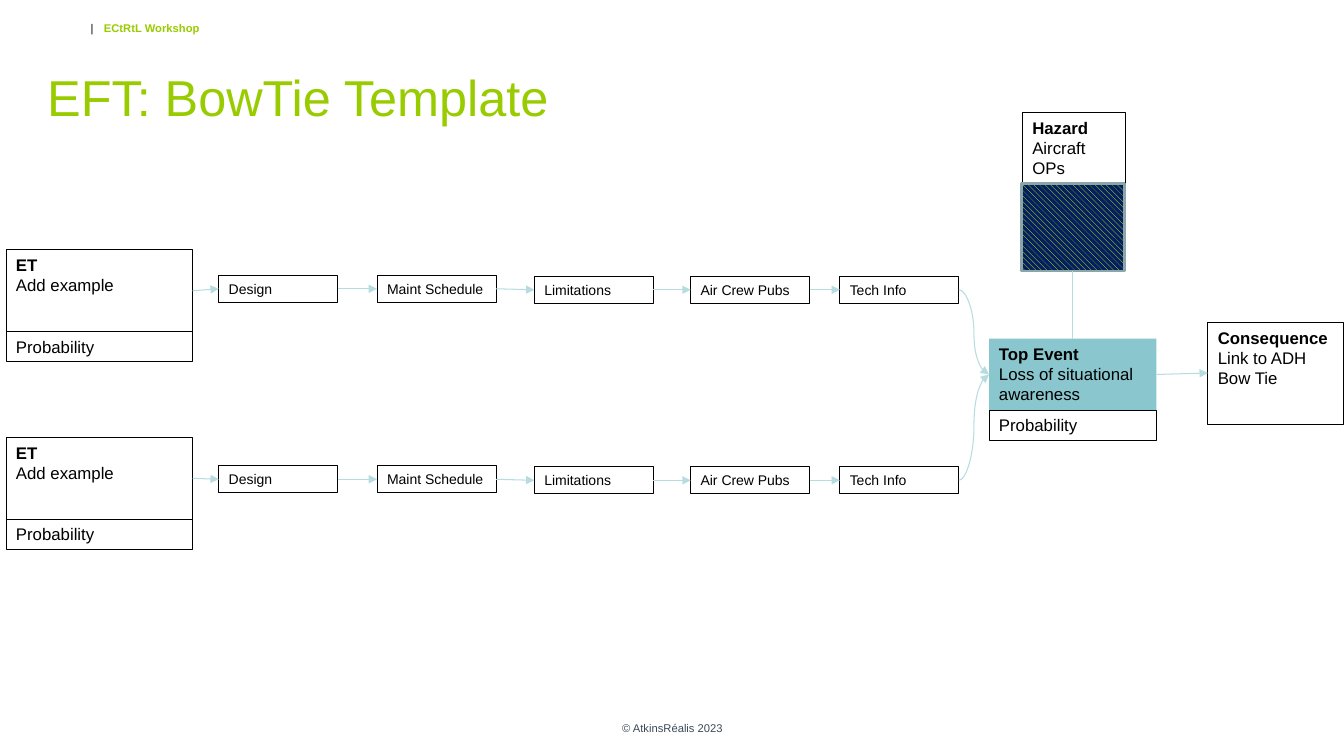
from lxml.etree import SubElement
from pptx import Presentation
from pptx.dml.color import RGBColor
from pptx.enum.dml import MSO_PATTERN
from pptx.enum.shapes import MSO_CONNECTOR, MSO_SHAPE
from pptx.enum.text import MSO_ANCHOR, PP_ALIGN
from pptx.oxml.ns import qn
from pptx.util import Inches, Pt

color = RGBColor.from_string
BLACK, LIME, TEAL = "000000", "99CC00", "B6DCDF"

deck = Presentation()
deck.slide_width, deck.slide_height = Inches(13.33), Inches(7.5)
page = deck.slides.add_slide(deck.slide_layouts[6])


def add_box(place, lines, size=12, text_color=BLACK, fill=None, line=BLACK,
            weight=0.75, anchor=MSO_ANCHOR.TOP, align=PP_ALIGN.LEFT):
    """Rectangle with text; lines are (text, bold) pairs."""
    box = page.shapes.add_shape(MSO_SHAPE.RECTANGLE, *map(Inches, place))
    box.shadow.inherit = False
    if fill:
        box.fill.solid()
        box.fill.fore_color.rgb = color(fill)
    else:
        box.fill.background()
    if line:
        box.line.color.rgb = color(line)
        box.line.width = Pt(weight)
    else:
        box.line.fill.background()
    frame = box.text_frame
    frame.word_wrap, frame.vertical_anchor = True, anchor
    for index, (text, bold) in enumerate(lines):
        para = frame.paragraphs[0] if index == 0 else frame.add_paragraph()
        para.alignment = align
        span = para.add_run()
        span.text = text
        span.font.color.rgb = color(text_color)
        for name, value in {"name": "Arial", "size": Pt(size), "bold": bold}.items():
            setattr(span.font, name, value)
    return box


def add_link(start, end, kind=MSO_CONNECTOR.STRAIGHT, arrow=True):
    link = page.shapes.add_connector(kind, *map(Inches, (*start, *end)))
    link.line.color.rgb = color(TEAL)
    link.line.width = Pt(0.75)
    if arrow:
        SubElement(link.line._get_or_add_ln(), qn("a:tailEnd"), type="triangle")
    SubElement(link._element.spPr, qn("a:effectLst"))


# Header: bar and workshop name on tab stops
header = page.shapes.add_textbox(*map(Inches, (0.26, 0.21, 10.91, 0.54)))
frame = header.text_frame
for name, value in {"margin_left": 0, "margin_right": 0, "margin_top": 0,
                    "margin_bottom": 0, "word_wrap": True}.items():
    setattr(frame, name, value)
para = frame.paragraphs[0]
tabs = SubElement(para._p.get_or_add_pPr(), qn("a:tabLst"))
for stop in (0.64, 0.77):
    SubElement(tabs, qn("a:tab"), pos=str(Inches(stop)), algn="l")
for text, tint, bold in (("\t|\t", BLACK, False), ("ECtRtL Workshop", LIME, True)):
    span = para.add_run()
    span.text = text
    span.font.color.rgb = color(tint)
    for name, value in {"name": "Arial", "size": Pt(8), "bold": bold}.items():
        setattr(span.font, name, value)

# Title and footer
add_box((0.37, 0.6, 12.08, 0.71), [("EFT: BowTie Template", False)], size=36,
        text_color=LIME, line=None, anchor=MSO_ANCHOR.BOTTOM)
add_box((4.56, 7.02, 4.22, 0.4), [("© AtkinsRéalis 2023", False)], size=8,
        text_color="394A58", line=None, anchor=MSO_ANCHOR.MIDDLE,
        align=PP_ALIGN.CENTER)

# Top event, hazard and consequence
event_left, event_top, event_width, event_height = 9.81, 3.36, 1.66, 0.71
event_middle = event_top + event_height / 2
add_box((event_left, event_top, event_width, event_height),
        [("Top Event", True), ("Loss of situational awareness", False)],
        fill="8AC6CD", line=None)
add_box((event_left, event_top + event_height, event_width, 0.3),
        [("Probability", False)])
add_box((10.14, 1.12, 1.02, 0.71), [("Hazard", True), ("Aircraft OPs", False)])
add_box((11.98, 3.2, 1.35, 1.01),
        [("Consequence", True), ("Link to ADH Bow Tie", False)])

hatch = add_box((10.13, 1.82, 1.02, 0.87), [], line="8AA6A8", weight=2)
hatch.fill.patterned()
hatch.fill.pattern = MSO_PATTERN.WIDE_DOWNWARD_DIAGONAL
hatch.fill.fore_color.rgb = color("FFFF00")
hatch.fill.back_color.rgb = color("002060")

add_link((10.64, 2.69), (10.64, event_top), arrow=False)
add_link((event_left + event_width, event_middle), (11.98, 3.7))

# Threat rows: threat, chain of barriers, curve into the top event
barriers = (("Design", 2.17, 0), ("Maint Schedule", 3.74, 0),
            ("Limitations", 5.3, 0.01), ("Air Crew Pubs", 6.85, 0.01),
            ("Tech Info", 8.33, 0.01))
threat_left, threat_width, threat_height = 0.06, 1.85, 0.81
barrier_width, barrier_height = 1.18, 0.27
for threat_top, barrier_top in ((2.48, 2.73), (4.34, 4.62)):
    add_box((threat_left, threat_top, threat_width, threat_height),
            [("ET", True), ("Add example", False)])
    add_box((threat_left, threat_top + threat_height, threat_width, 0.3),
            [("Probability", False)])
    start = (threat_left + threat_width, threat_top + threat_height / 2)
    for label, left, drop in barriers:
        top = barrier_top + drop
        middle = top + barrier_height / 2
        add_box((left, top, barrier_width, barrier_height), [(label, False)], size=10)
        add_link(start, (left, middle))
        start = (left + barrier_width, middle)
    add_link(start, (event_left, event_middle), MSO_CONNECTOR.CURVE)

deck.save("out.pptx")
